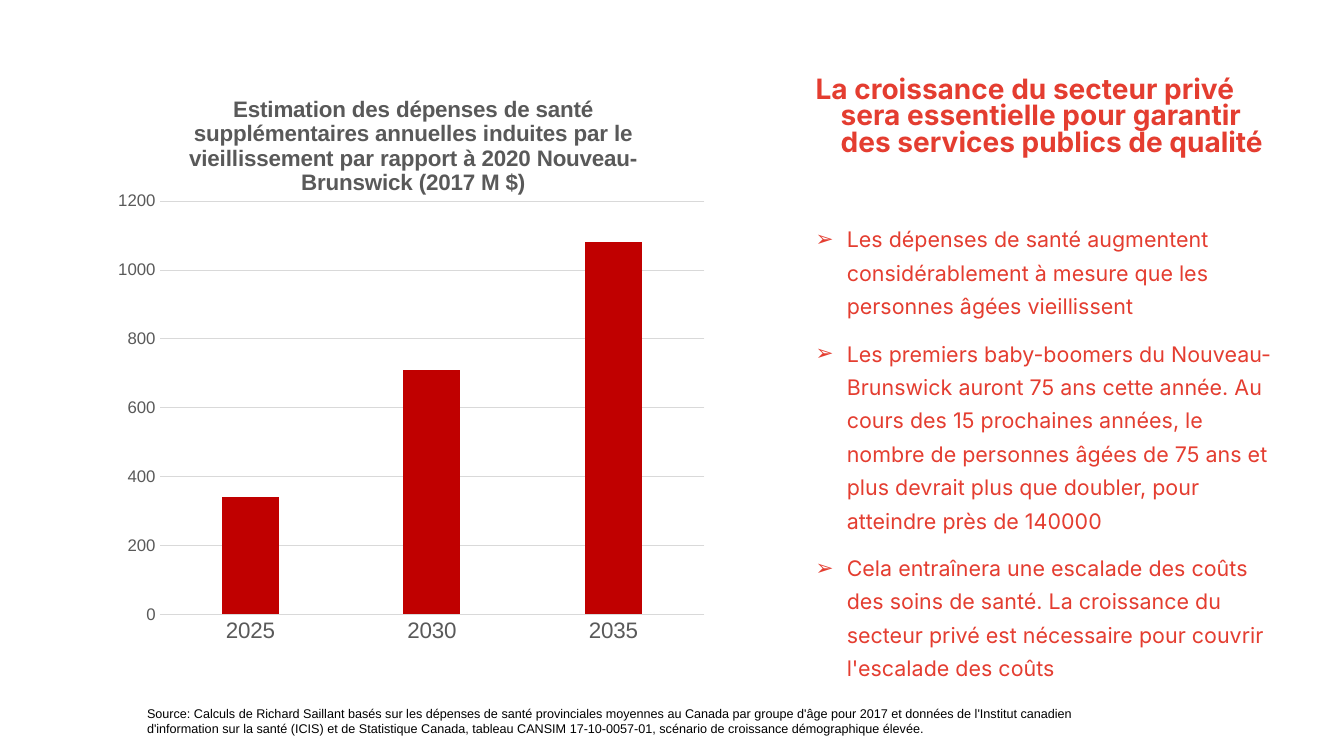
from lxml import etree
from pptx import Presentation
from pptx import util as u
from pptx.chart.data import CategoryChartData
from pptx.dml.color import RGBColor
from pptx.enum import chart as c
from pptx.oxml import parse_xml
from pptx.oxml.ns import nsdecls, qn

CORAL = RGBColor(0xE4, 0x3D, 0x30)
CRIMSON = RGBColor(0xC0, 0x00, 0x00)
CHARCOAL = RGBColor(0x59, 0x59, 0x59)
SILVER = RGBColor(0xD9, 0xD9, 0xD9)
BLACK = RGBColor(0x00, 0x00, 0x00)

COLUMNS, ROWS = 133.3, 75
TEXT_COLUMN, TEXT_SPAN = 77.4, 50.9

HEADING = ("La croissance du secteur privé sera essentielle pour garantir "
           "des services publics de qualité")
REASONS = [
    "Les dépenses de santé augmentent considérablement à mesure que les "
    "personnes âgées vieillissent",
    "Les premiers baby-boomers du Nouveau-Brunswick auront 75 ans cette année. "
    "Au cours des 15 prochaines années, le nombre de personnes âgées de 75 ans "
    "et plus devrait plus que doubler, pour atteindre près de 140000",
    "Cela entraînera une escalade des coûts des soins de santé. La croissance du "
    "secteur privé est nécessaire pour couvrir l'escalade des coûts",
]
CHART_TITLE = ("Estimation des dépenses de santé supplémentaires annuelles induites "
               "par le vieillissement par rapport à 2020 Nouveau-Brunswick (2017 M $)")
COSTS = {"2025": 340, "2030": 710, "2035": 1080}
SOURCE = ("Source: Calculs de Richard Saillant basés sur les dépenses de santé "
          "provinciales moyennes au Canada par groupe d'âge pour 2017 et données de "
          "l'Institut canadien d'information sur la santé (ICIS) et de Statistique "
          "Canada, tableau CANSIM 17-10-0057-01, scénario de croissance "
          "démographique élevée.")


class HealthCostSlide:
    """Draws text and charts on a slide in one style, placed by grid columns and rows."""

    def __init__(self, presentation):
        self.cell_width = presentation.slide_width / COLUMNS
        self.cell_height = presentation.slide_height / ROWS
        self.slide = presentation.slides.add_slide(presentation.slide_layouts[6])

    def place(self, column, row, columns, rows):
        return (int(column * self.cell_width), int(row * self.cell_height),
                int(columns * self.cell_width), int(rows * self.cell_height))

    def style(self, font, size, color, name="Arial", bold=False):
        font.name, font.size, font.bold = name, u.Pt(size), bold
        font.color.rgb = color

    def text(self, area, lines, size, color, name="Arial", bold=False,
             spacing=1.0, margin=0, hanging=0, bullet=None):
        frame = self.slide.shapes.add_textbox(*self.place(*area)).text_frame
        frame.word_wrap = True
        for index, line in enumerate(lines):
            paragraph = frame.paragraphs[0] if index == 0 else frame.add_paragraph()
            paragraph.text = line
            paragraph.line_spacing = spacing
            if index:
                paragraph.space_before = u.Pt(10)
            properties = paragraph._p.get_or_add_pPr()
            properties.set("marL", str(u.Inches(margin)))
            properties.set("indent", str(-u.Inches(hanging)))
            if bullet:
                tint = etree.SubElement(properties, qn("a:buClr"))
                etree.SubElement(tint, qn("a:srgbClr")).set("val", str(color))
                etree.SubElement(properties, qn("a:buFont")).set("typeface", "Arial")
                etree.SubElement(properties, qn("a:buChar")).set("char", bullet)
            self.style(paragraph.font, size, color, name, bold)

    def column_chart(self, area, title, values, plot_area):
        data = CategoryChartData(number_format="0")
        data.categories = list(values)
        data.add_series("Series 1", list(values.values()))
        chart = self.slide.shapes.add_chart(
            c.XL_CHART_TYPE.COLUMN_CLUSTERED, *self.place(*area), data).chart
        self.style(chart.font, 10, BLACK)
        chart.has_legend = False
        chart.has_title = True
        heading = chart.chart_title.text_frame.paragraphs[0]
        heading.text = title
        self.style(heading.font, 16, CHARCOAL, bold=True)
        chart.chart_title.include_in_layout = False

        plot = chart.plots[0]
        plot.gap_width, plot.overlap, plot.vary_by_categories = 219, -27, False
        fill = plot.series[0].format.fill
        fill.solid()
        fill.fore_color.rgb = CRIMSON

        for axis, size in ((chart.category_axis, 16), (chart.value_axis, 12)):
            axis.major_tick_mark = axis.minor_tick_mark = c.XL_TICK_MARK.NONE
            self.style(axis.tick_labels.font, size, CHARCOAL)
        scale = chart.value_axis
        scale.minimum_scale, scale.maximum_scale, scale.major_unit = 0, 1200, 200
        scale.tick_labels.number_format = "0"
        scale.tick_labels.number_format_is_linked = False
        scale.format.line.fill.background()
        for line in (chart.category_axis.format.line, scale.major_gridlines.format.line):
            line.color.rgb = SILVER
            line.width = u.Pt(0.75)
        self.fix_plot(chart, plot_area)

    def fix_plot(self, chart, plot_area):
        settings = [("layoutTarget", "inner"), ("xMode", "edge"), ("yMode", "edge"),
                    *zip("xywh", plot_area)]
        entries = "".join(f'<c:{key} val="{value}"/>' for key, value in settings)
        layout = parse_xml(f"<c:layout {nsdecls('c')}><c:manualLayout>{entries}"
                           "</c:manualLayout></c:layout>")
        plot_element = chart._chartSpace.chart.plotArea
        for previous in plot_element.findall(qn("c:layout")):
            plot_element.remove(previous)
        plot_element.insert(0, layout)


def main():
    presentation = Presentation()
    presentation.slide_width, presentation.slide_height = u.Inches(13.33), u.Inches(7.5)
    page = HealthCostSlide(presentation)
    page.text((TEXT_COLUMN, 7.2, TEXT_SPAN, 13), [HEADING], 20, CORAL, "Inter",
              bold=True, spacing=0.8, margin=0.5, hanging=0.25)
    page.text((TEXT_COLUMN, 21.2, TEXT_SPAN, 48.2), REASONS, 15.3, CORAL, "Inter",
              spacing=1.3, margin=0.56, hanging=0.31, bullet="➢")
    page.column_chart((10.3, 7.3, 61.4, 60.3), CHART_TITLE, COSTS,
                      (0.09, 0.21, 0.88, 0.68))
    page.text((13.6, 69.5, 97.9, 4), [SOURCE], 9, BLACK)
    presentation.save("out.pptx")


if __name__ == "__main__":
    main()
